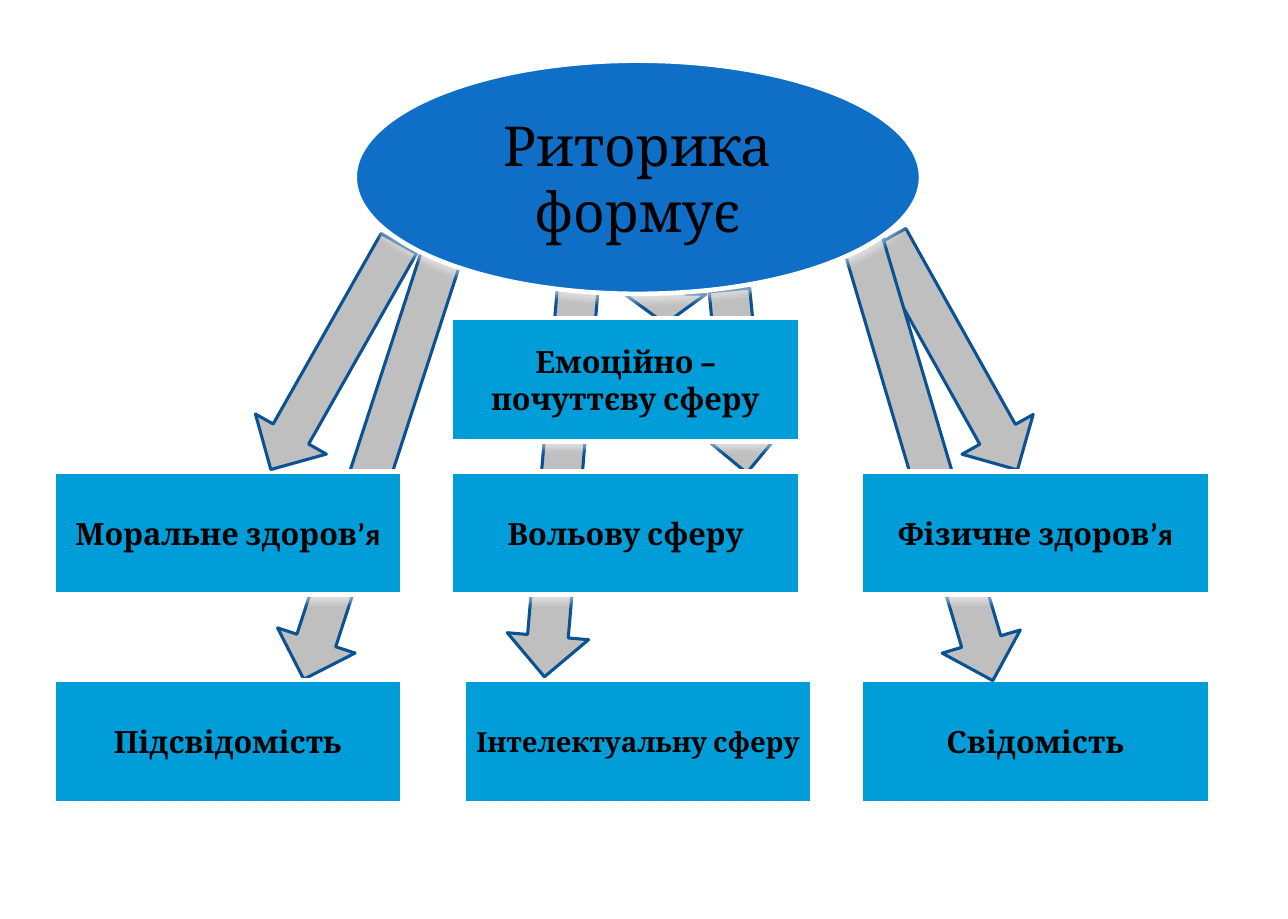
from lxml import etree
from pptx import Presentation
from pptx import util as u
from pptx.dml.color import RGBColor
from pptx.enum import shapes, text
from pptx.oxml import ns

COLOURS = {
    "arrow": "BFBFBF",
    "arrow line": "0B5292",
    "ellipse": "0F6FC6",
    "box": "009DD9",
    "outline": "FFFFFF",
    "shadow": "FFFFFF",
    "text": "000000",
}


def add_filled_shape(kind, left, top, width, height, fill, line, line_width):
    shape = slide.shapes.add_shape(kind, u.Cm(left), u.Cm(top), u.Cm(width), u.Cm(height))
    shape.shadow.inherit = False
    shape.fill.solid()
    shape.fill.fore_color.rgb = RGBColor.from_string(COLOURS[fill])
    shape.line.color.rgb = RGBColor.from_string(COLOURS[line])
    shape.line.width = u.Pt(line_width)
    return shape


def finish_label(shape, lines, size, bold):
    """Add the soft shadow and the centred text; "|" starts a Calibri run."""
    effects = shape._element.spPr.find(ns.qn("a:effectLst"))
    shadow = etree.SubElement(effects, ns.qn("a:outerShdw"), blurRad=str(u.Pt(4.5)),
                              dist=str(u.Pt(3)), dir="5400000", rotWithShape="0")
    colour = etree.SubElement(shadow, ns.qn("a:srgbClr"), val=COLOURS["shadow"])
    etree.SubElement(colour, ns.qn("a:alpha"), val="48000")
    frame = shape.text_frame
    frame.word_wrap = True
    frame.vertical_anchor = text.MSO_ANCHOR.MIDDLE
    for index, line in enumerate(lines):
        paragraph = frame.add_paragraph() if index else frame.paragraphs[0]
        paragraph.alignment = text.PP_ALIGN.CENTER
        paragraph.font.size = u.Pt(size)
        paragraph.font.bold = bold
        paragraph.font.color.rgb = RGBColor.from_string(COLOURS["text"])
        for part, font_name in zip(line.split("|"), ("Cambria", "Calibri")):
            run = paragraph.add_run()
            run.text = part
            run.font.name = font_name


presentation = Presentation()
presentation.slide_width = u.Cm(29.7)
presentation.slide_height = u.Cm(21.2)
slide = presentation.slides.add_slide(presentation.slide_layouts[6])

ARROW_WIDTH = 1.88
BOX_WIDTH, BOX_HEIGHT = 8.05, 2.84
LEFT, MIDDLE, RIGHT = 1.23, 10.4, 19.85
UPPER, CENTRE, LOWER = 7.34, 10.88, 15.69

# Arrows: left, top, length, rotation
back_arrows = [
    (14.4, 6.1, 1.37, 0),
    (7.65, 5.66, 10.26, 18),
    (16.08, 6.68, 4.24, -5.4),
]
front_arrows = [
    (6.78, 5.23, 5.99, 29.5),
    (21.03, 5.11, 6.12, -29.2),
    (12.01, 6.38, 9.25, 4.9),
    (20.45, 5.33, 10.59, -16.5),
]
# Boxes: left, top, label, text size
back_boxes = [
    (LEFT, CENTRE, "Моральне здоров|’я", 20),
    (MIDDLE + 0.29, LOWER, "Інтелектуальну сферу", 18),
    (LEFT, LOWER, "Підсвідомість", 20),
    (RIGHT, LOWER, "Свідомість", 20),
]
front_boxes = [
    (MIDDLE, CENTRE, "Вольову сферу", 20),
    (MIDDLE, UPPER, "Емоційно – почуттєву сферу", 20),
    (RIGHT, CENTRE, "Фізичне здоров|’я", 20),
]

for arrows, boxes in ((back_arrows, back_boxes), (front_arrows, front_boxes)):
    for left, top, length, rotation in arrows:
        arrow = add_filled_shape(shapes.MSO_SHAPE.DOWN_ARROW, left, top, ARROW_WIDTH,
                                 length, "arrow", "arrow line", 2)
        arrow.rotation = rotation
    if boxes is front_boxes:
        ellipse = add_filled_shape(shapes.MSO_SHAPE.OVAL, 8.18, 1.4, 13.06, 5.38,
                                   "ellipse", "outline", 3)
        finish_label(ellipse, ["Риторика", "формує"], 36, False)
    for left, top, label, size in boxes:
        box = add_filled_shape(shapes.MSO_SHAPE.FLOWCHART_PROCESS, left, top,
                               BOX_WIDTH, BOX_HEIGHT, "box", "outline", 3)
        finish_label(box, [label], size, True)

presentation.save("out.pptx")
